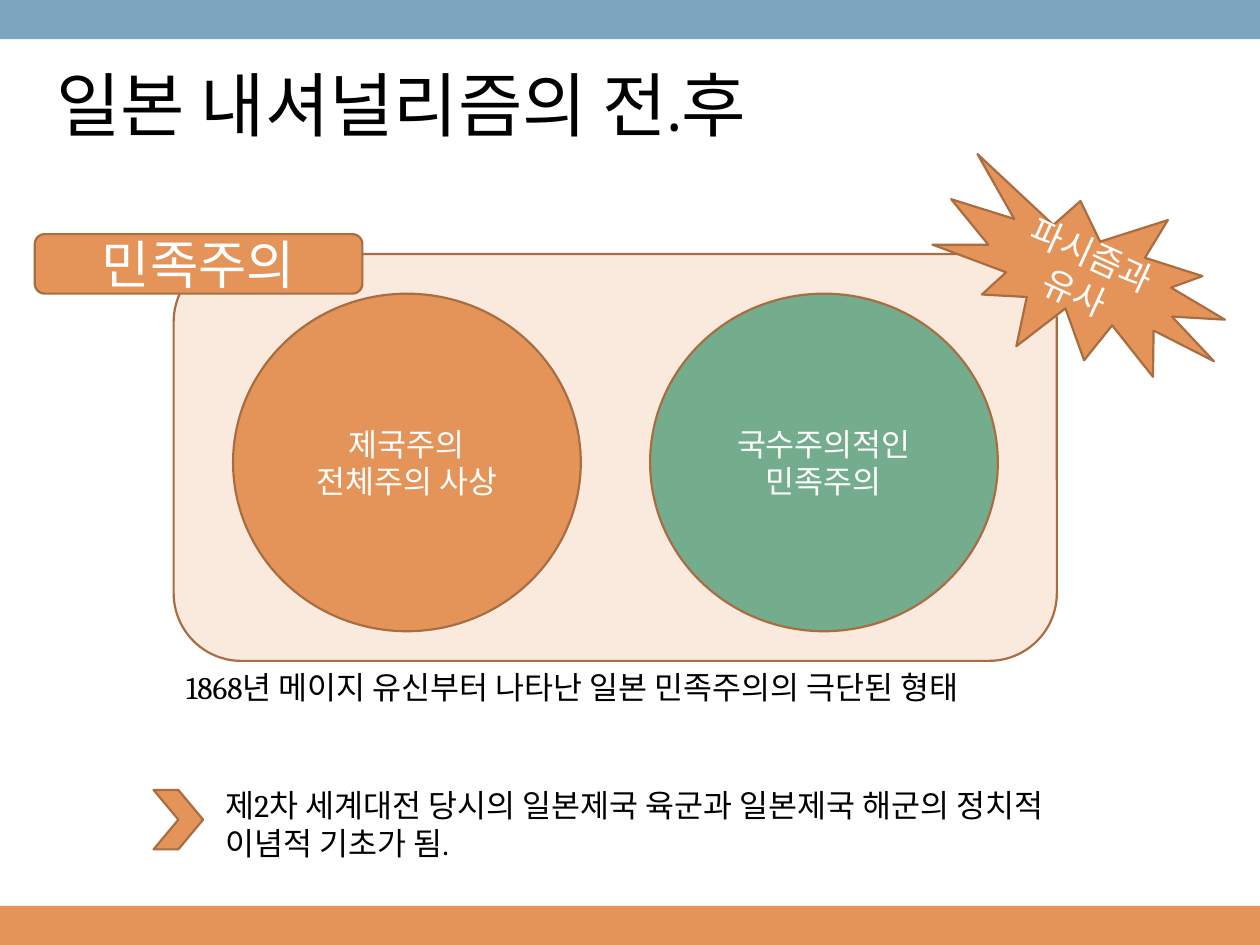
"""Builds a slide on Japanese nationalism before and after."""
from pptx import Presentation
from pptx.dml.color import RGBColor
from pptx.enum.shapes import MSO_SHAPE as Shape
from pptx.enum.text import MSO_ANCHOR as Anchor, MSO_AUTO_SIZE as AutoSize, PP_ALIGN as Align
from pptx.util import Pt

ORANGE = RGBColor(0xE4, 0x94, 0x58)
BLUE = RGBColor(0x7B, 0xA5, 0xBE)
GREEN = RGBColor(0x74, 0xAD, 0x8D)
CREAM = RGBColor(0xFA, 0xEA, 0xDE)
BROWN = RGBColor(0xA9, 0x6D, 0x41)
BLACK = RGBColor(0, 0, 0)
WHITE = RGBColor(0xFF, 0xFF, 0xFF)

PAGE_WIDTH, PAGE_HEIGHT = 720, 540
BAR_HEIGHT = 22.4
CIRCLE_LEFT, CIRCLE_STEP = 133.2, 238.3


class Painter:
    """Holds the style and the current slide."""

    font = "Cambria"
    line_width = 1.25

    def __init__(self, page):
        self.page = page

    def add_lines(self, frame, lines, size, color, align, anchor):
        frame.word_wrap = True
        frame.vertical_anchor = anchor
        for index, line in enumerate(lines):
            para = frame.add_paragraph() if index else frame.paragraphs[0]
            para.alignment = align
            span = para.add_run()
            span.text = line
            span.font.name = self.font
            span.font.size = Pt(size)
            span.font.color.rgb = color

    def title(self, text, left, top, width, height):
        box = self.page.shapes.title
        box.left, box.top, box.width, box.height = map(Pt, (left, top, width, height))
        self.add_lines(box.text_frame, [text], 40, BLACK, Align.LEFT, Anchor.TOP)
        box.text_frame.auto_size = AutoSize.NONE

    def bar(self, top, fill):
        box = self.shape(Shape.RECTANGLE, 0, top, PAGE_WIDTH, BAR_HEIGHT, fill)
        box.line.fill.background()

    def shape(self, kind, left, top, width, height, fill, lines=(), size=18):
        box = self.page.shapes.add_shape(kind, *map(Pt, (left, top, width, height)))
        box.shadow.inherit = False
        box.fill.solid()
        box.fill.fore_color.rgb = fill
        box.line.color.rgb = BROWN
        box.line.width = Pt(self.line_width)
        self.add_lines(box.text_frame, lines, size, WHITE, Align.CENTER, Anchor.MIDDLE)
        return box

    def note(self, text, left, top, width, height):
        box = self.page.shapes.add_textbox(*map(Pt, (left, top, width, height)))
        self.add_lines(box.text_frame, [text], 18, BLACK, Align.LEFT, Anchor.TOP)


def main():
    deck = Presentation()
    deck.slide_width, deck.slide_height = Pt(PAGE_WIDTH), Pt(PAGE_HEIGHT)
    painter = Painter(deck.slides.add_slide(deck.slide_layouts[5]))

    painter.bar(PAGE_HEIGHT - BAR_HEIGHT, ORANGE)
    painter.bar(0, BLUE)
    painter.title("일본 내셔널리즘의 전.후", 25.2, 31.7, 487.4, 55.4)
    painter.shape(Shape.ROUNDED_RECTANGLE, 99.2, 145.2, 504.7, 232.5, CREAM)
    painter.shape(Shape.ROUNDED_RECTANGLE, 19.9, 133.8, 187.2, 34, ORANGE, ["민족주의"], 30)

    circles = [
        (ORANGE, ["제국주의", "전체주의 사상"]),
        (GREEN, ["국수주의적인", "민족주의"]),
    ]
    for index, (fill, lines) in enumerate(circles):
        left = CIRCLE_LEFT + index * CIRCLE_STEP
        painter.shape(Shape.OVAL, left, 167.8, 198.7, 192.9, fill, lines)

    painter.shape(Shape.CHEVRON, 87.8, 451.4, 28.3, 34, ORANGE)
    painter.note("제2차 세계대전 당시의 일본제국 육군과 일본제국 해군의 정치적 이념적 기초가 됨.",
                 121.7, 445.7, 493.2, 51.1)
    burst = painter.shape(Shape.EXPLOSION1, 531.4, 108.7, 175, 101.5, ORANGE, ["파시즘과유사"], 20)
    burst.rotation = 24.5
    painter.note("1868년 메이지 유신부터 나타난 일본 민족주의의 극단된 형태", 99.2, 378, 527, 28.8)

    deck.save("out.pptx")


if __name__ == "__main__":
    main()
